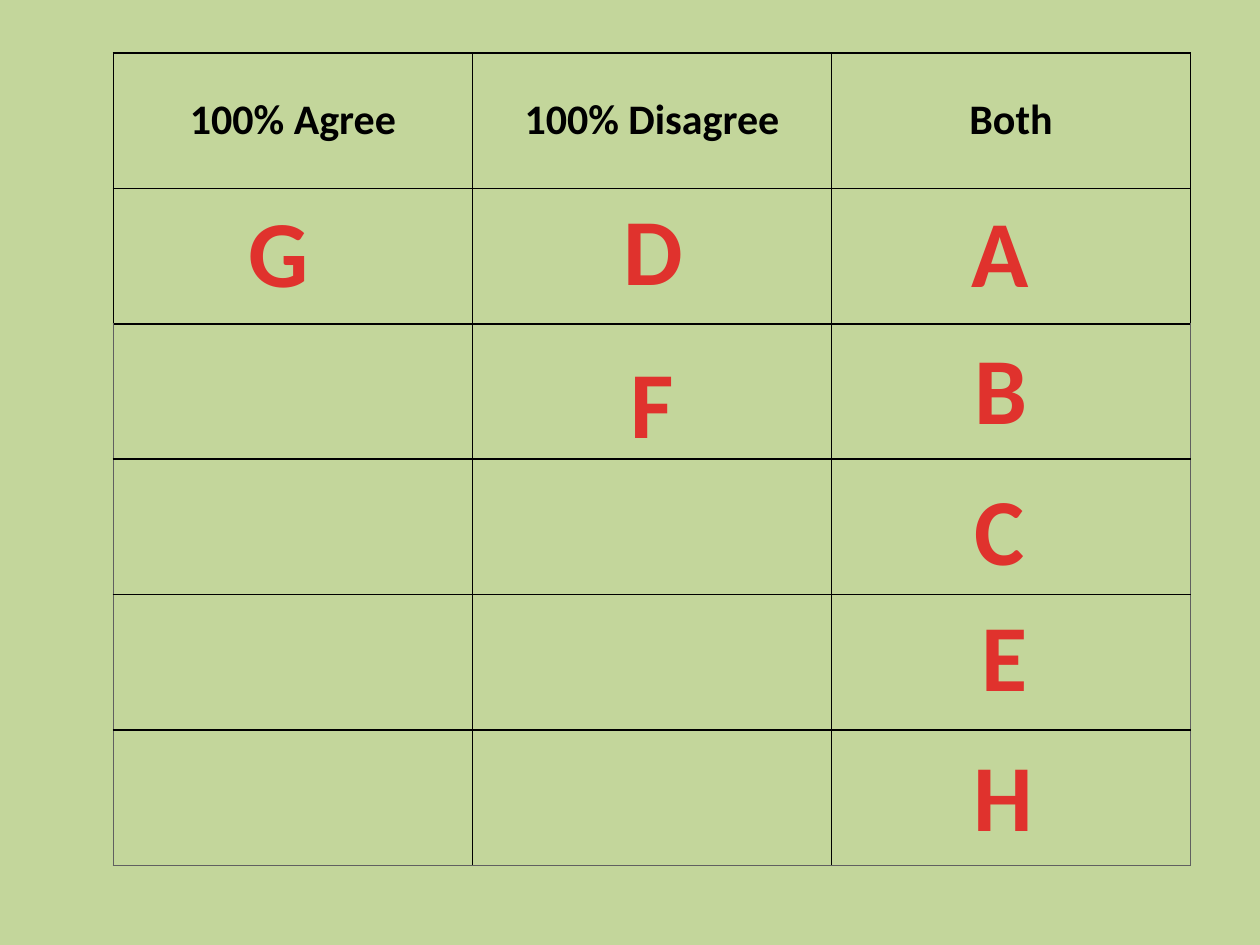
import pptx
import pptx.dml.color
import pptx.enum.dml
import pptx.enum.text
import pptx.oxml
import pptx.oxml.ns
import pptx.util

Pt = pptx.util.Pt
COLOURS = {
    "background": "C3D69B",
    "text": "000000",
    "grid": "000000",
    "outer": "606060",
    "letter_top": "E0322D",
    "letter_bottom": "A2201C",
}
HEADINGS = ["100% Agree", "100% Disagree", "Both"]
ROWS = 6
TABLE_LEFT, TABLE_TOP = 64.8, 30.24
COLUMN_WIDTH, ROW_HEIGHT = 205.2, 77.4
LETTER_HEIGHT = 72.7
# letter: left, top, width
LETTERS = {
    "F": (352.8, 193, 40.3),
    "A": (547.2, 106.6, 48.2),
    "B": (549.4, 185, 45.4),
    "C": (549.4, 265.7, 43.9),
    "E": (553, 337.7, 41.8),
    "D": (348.5, 105.8, 49.7),
    "H": (548.6, 417.6, 49.7),
    "G": (134.6, 106.6, 49.7),
}
HEADING_FONT = {"name": "Calibri", "size": Pt(24), "bold": True}
LETTER_FONT = {"name": "Calibri", "size": Pt(54), "bold": True}
CELL_FORMAT = {
    "vertical_anchor": pptx.enum.text.MSO_ANCHOR.MIDDLE,
    "margin_left": Pt(3),
    "margin_right": Pt(3),
    "margin_top": Pt(3),
    "margin_bottom": Pt(3),
}
LETTER_FRAME = {
    "word_wrap": False,
    "auto_size": pptx.enum.text.MSO_AUTO_SIZE.SHAPE_TO_FIT_TEXT,
}


def colour(name):
    return pptx.dml.color.RGBColor.from_string(COLOURS[name])


def apply_format(target, values):
    for name, value in values.items():
        setattr(target, name, value)


def add_centred_text(frame, text, font_format):
    """Write one centred line and return its run."""
    para = frame.paragraphs[0]
    para.alignment = pptx.enum.text.PP_ALIGN.CENTER
    span = para.add_run()
    span.text = text
    apply_format(span.font, font_format)
    return span


def set_borders(cell, row, column):
    """Black grid lines, with a grey outer edge below the first two rows."""
    outer = {
        "L": row > 1 and column == 0,
        "R": row > 1 and column == len(HEADINGS) - 1,
        "T": False,
        "B": row == ROWS - 1,
    }
    properties = cell._tc.get_or_add_tcPr()
    for index, (side, is_outer) in enumerate(outer.items()):
        value = COLOURS["outer" if is_outer else "grid"]
        line = pptx.oxml.parse_xml(
            f'<a:ln{side} {pptx.oxml.ns.nsdecls("a")} w="{Pt(1)}">'
            f'<a:solidFill><a:srgbClr val="{value}"/></a:solidFill></a:ln{side}>'
        )
        properties.insert(index, line)


def add_opinion_table(page):
    columns = len(HEADINGS)
    table = page.shapes.add_table(
        ROWS, columns, Pt(TABLE_LEFT), Pt(TABLE_TOP),
        Pt(COLUMN_WIDTH * columns), Pt(ROW_HEIGHT * ROWS),
    ).table
    apply_format(table, {"first_row": False, "horz_banding": False})
    for row in range(ROWS):
        for column in range(columns):
            cell = table.cell(row, column)
            apply_format(cell, CELL_FORMAT)
            cell.fill.background()
            set_borders(cell, row, column)
    for column, heading in enumerate(HEADINGS):
        span = add_centred_text(table.cell(0, column).text_frame, heading, HEADING_FONT)
        span.font.color.rgb = colour("text")


def add_letter(page, letter, left, top, width):
    box = page.shapes.add_textbox(Pt(left), Pt(top), Pt(width), Pt(LETTER_HEIGHT))
    apply_format(box.text_frame, LETTER_FRAME)
    span = add_centred_text(box.text_frame, letter, LETTER_FONT)
    span._r.get_or_add_rPr().set("spc", "50")
    fill = span.font.fill
    fill.gradient()
    fill.gradient_angle = 270
    stops = [("letter_top", 0.25), ("letter_bottom", 1)]
    for stop, (name, position) in zip(fill.gradient_stops, stops):
        stop.color.rgb = colour(name)
        stop.position = position


def main():
    deck = pptx.Presentation()
    apply_format(deck, {"slide_width": Pt(720), "slide_height": Pt(540)})
    page = deck.slides.add_slide(deck.slide_layouts[6])
    page.background.fill.solid()
    page.background.fill.fore_color.rgb = colour("background")
    add_opinion_table(page)
    for letter, place in LETTERS.items():
        add_letter(page, letter, *place)
    deck.save("out.pptx")


if __name__ == "__main__":
    main()
